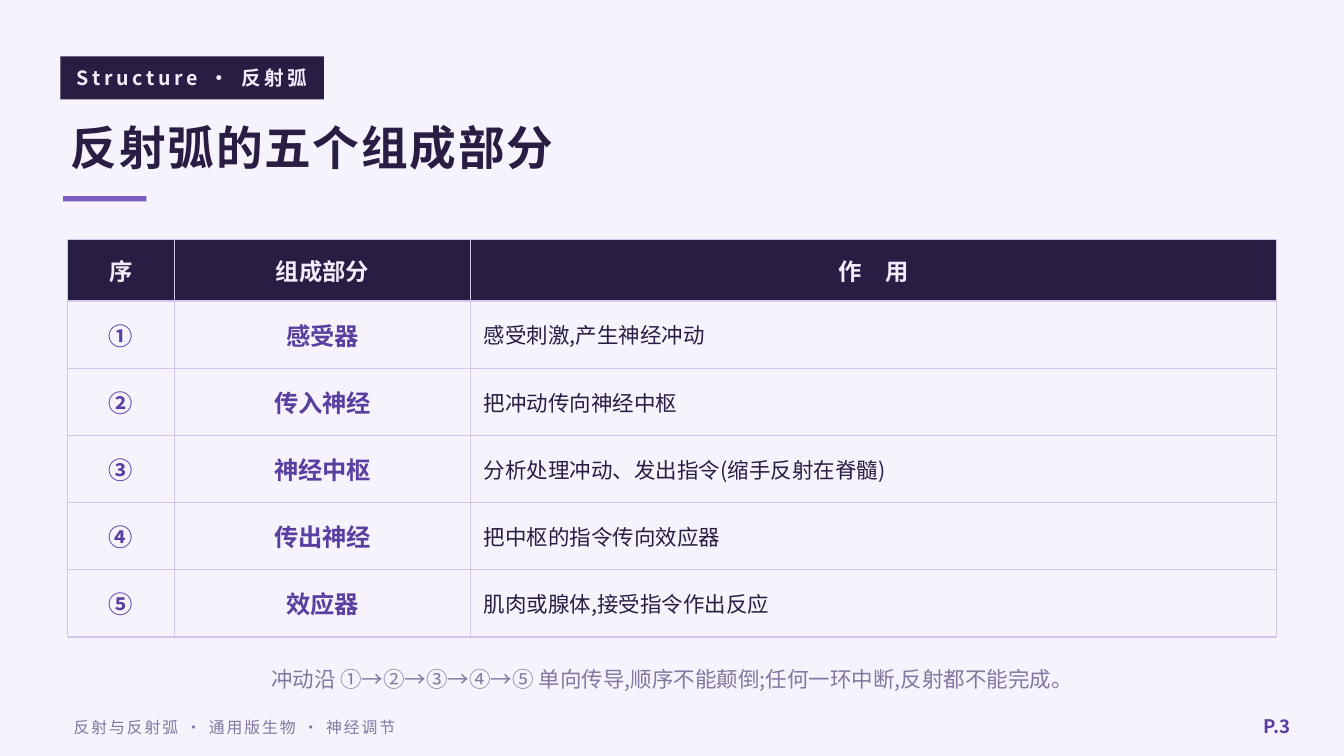
"""Build the slide on the five parts of the reflex arc."""
from lxml import etree
from pptx import Presentation
from pptx.dml.color import RGBColor
from pptx.enum.shapes import MSO_SHAPE
from pptx.enum.text import MSO_ANCHOR, PP_ALIGN
from pptx.oxml.ns import qn
from pptx.util import Inches, Pt

RECT = MSO_SHAPE.RECTANGLE
MIDDLE = MSO_ANCHOR.MIDDLE
LEFT, CENTER, RIGHT = PP_ALIGN.LEFT, PP_ALIGN.CENTER, PP_ALIGN.RIGHT

TAG = "Structure · 反射弧"
TITLE = "反射弧的五个组成部分"
HEAD = ("序", "组成部分", "作　用")
PARTS = [
    ("①", "感受器", "感受刺激,产生神经冲动"),
    ("②", "传入神经", "把冲动传向神经中枢"),
    ("③", "神经中枢", "分析处理冲动、发出指令(缩手反射在脊髓)"),
    ("④", "传出神经", "把中枢的指令传向效应器"),
    ("⑤", "效应器", "肌肉或腺体,接受指令作出反应"),
]
NOTE = "冲动沿 ①→②→③→④→⑤ 单向传导,顺序不能颠倒;任何一环中断,反射都不能完成。"
FOOT = "反射与反射弧 · 通用版生物 · 神经调节"
PAGE = "P.3"

THEME = {
    "font": "Noto Sans CJK SC",
    "paper": "F7F3FD", "ink": "2A1D44", "light": "F2ECFB",
    "bar": "7A5CC0", "accent": "5A3FA0", "muted": "8377A0", "rule": "D4C6EF",
    "tag": 10.5, "title": 25, "head": 12.5, "part": 13,
    "body": 11.5, "foot": 8.5, "page": 10, "line": 0.75,
}
WIDE = 10
HIGH = WIDE * 9 / 16
EDGE = 0.05 * WIDE
SPAN = WIDE - 2 * EDGE
COLS = (0.8, 2.2, 6)
TOP, HEAD_ROW, ROW = 1.78, 0.46, 0.5


def paint(fill, color):
    fill.solid()
    fill.fore_color.rgb = RGBColor.from_string(THEME[color])


def write(frame, text, size="body", color="ink", bold=False, align=LEFT, gap=0):
    para = frame.paragraphs[0]
    para.alignment = align
    run = para.add_run()
    run.text = text
    font = run.font
    font.size, font.bold, font.name = Pt(THEME[size]), bold, THEME["font"]
    font.color.rgb = RGBColor.from_string(THEME[color])
    props = run._r.get_or_add_rPr()
    etree.SubElement(props, qn("a:ea"), typeface=THEME["font"])
    if gap:
        props.set("spc", str(gap * 100))


def label(slide, box, text, **form):
    frame = slide.shapes.add_textbox(*map(Inches, box)).text_frame
    frame.word_wrap = True
    frame.vertical_anchor = MIDDLE
    write(frame, text, **form)


def block(slide, box, color):
    shape = slide.shapes.add_shape(RECT, *map(Inches, box))
    shape.shadow.inherit = False
    paint(shape.fill, color)
    shape.line.fill.background()


def fill_cell(cell, text, fill, **form):
    props = cell._tc.get_or_add_tcPr()
    for side in ("lnL", "lnR", "lnT", "lnB"):
        line = etree.SubElement(props, qn(f"a:{side}"), w=str(Pt(THEME["line"])))
        solid = etree.SubElement(line, qn("a:solidFill"))
        etree.SubElement(solid, qn("a:srgbClr"), val=THEME["rule"])
    paint(cell.fill, fill)
    cell.vertical_anchor = MIDDLE
    write(cell.text_frame, text, **form)


def add_grid(slide):
    high = HEAD_ROW + ROW * len(PARTS)
    box = map(Inches, (EDGE, TOP, SPAN, high))
    grid = slide.shapes.add_table(len(PARTS) + 1, len(COLS), *box).table
    grid.first_row = grid.horz_banding = False
    for col, wide in zip(grid.columns, COLS):
        col.width = Inches(wide)
    for i, texts in enumerate((HEAD, *PARTS)):
        grid.rows[i].height = Inches(ROW if i else HEAD_ROW)
        for j, text in enumerate(texts):
            if i == 0:
                form = dict(fill="ink", size="head", color="light", bold=True, align=CENTER)
            elif j < 2:
                form = dict(fill="paper", size="part", color="accent", bold=True, align=CENTER)
            else:
                form = dict(fill="paper")
            fill_cell(grid.cell(i, j), text, **form)


def main():
    deck = Presentation()
    deck.slide_width, deck.slide_height = Inches(WIDE), Inches(HIGH)
    slide = deck.slides.add_slide(deck.slide_layouts[6])
    paint(slide.background.fill, "paper")
    block(slide, (0.45, 0.42, 1.96, 0.32), "ink")
    label(slide, (0.45, 0.41, 1.96, 0.34), TAG,
          size="tag", color="light", bold=True, align=CENTER, gap=2)
    label(slide, (0.43, 0.78, SPAN, 0.62), TITLE, size="title", bold=True, gap=1)
    block(slide, (0.47, 1.46, 0.62, 0.04), "bar")
    add_grid(slide)
    label(slide, (EDGE, 4.85, SPAN, 0.4), NOTE, color="muted", align=CENTER)
    label(slide, (0.45, 5.26, 6.5, 0.3), FOOT, size="foot", color="muted", gap=1)
    label(slide, (9.1, 5.24, 0.6, 0.32), PAGE,
          size="page", color="accent", bold=True, align=RIGHT)
    deck.save("out.pptx")


if __name__ == "__main__":
    main()
